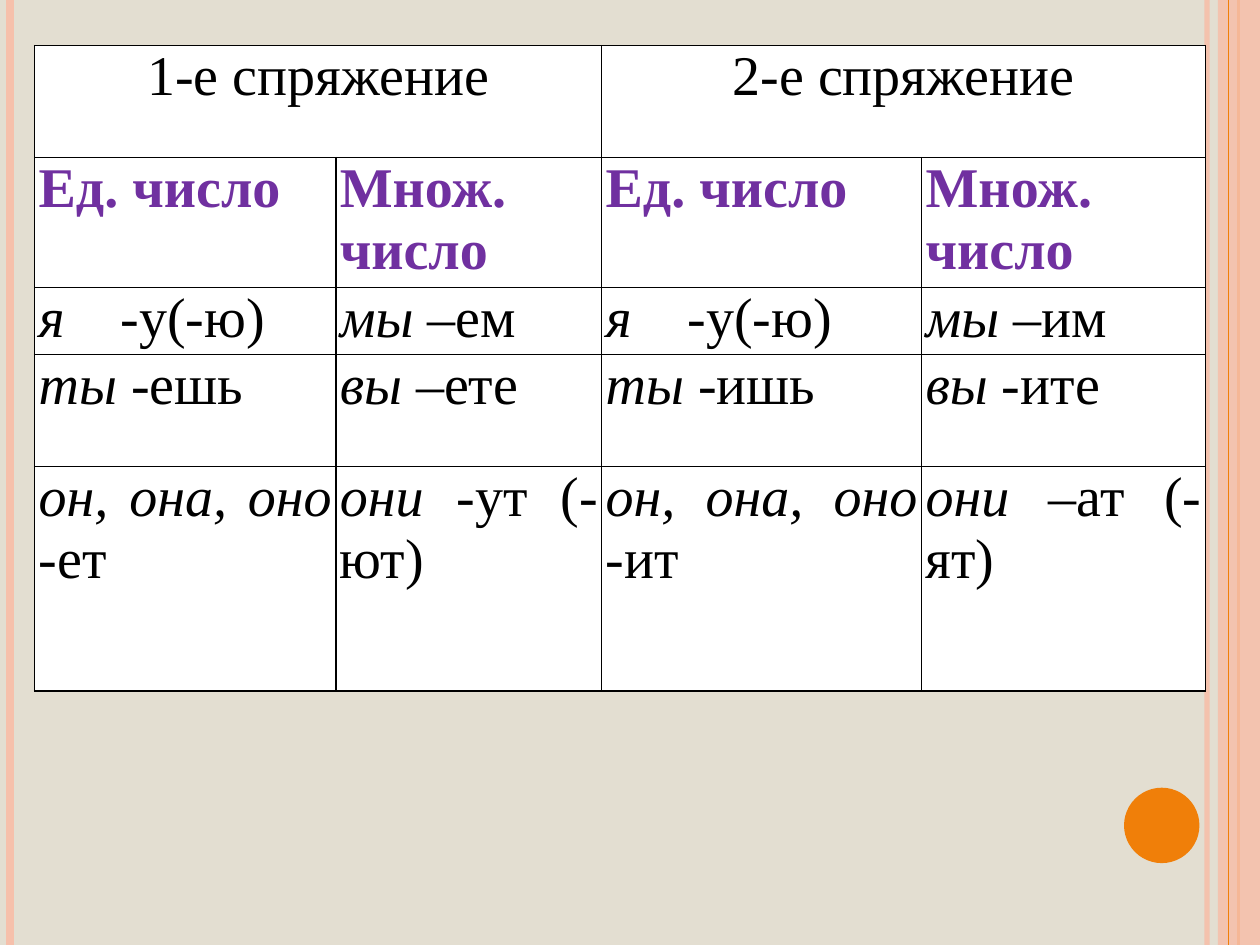
from dataclasses import dataclass

from lxml import etree
from pptx import Presentation
from pptx.dml.color import RGBColor
from pptx.enum.shapes import MSO_CONNECTOR, MSO_SHAPE
from pptx.enum.text import PP_ALIGN
from pptx.oxml.ns import qn
from pptx.util import Cm, Pt

LINE = MSO_CONNECTOR.STRAIGHT
RECT, OVAL = MSO_SHAPE.RECTANGLE, MSO_SHAPE.OVAL
CENTER, JUSTIFY = PP_ALIGN.CENTER, PP_ALIGN.JUSTIFY

WIDTH, HEIGHT = 25.4, 19.05
COLS = [6.07, 5.36, 6.45, 5.72]
ROWS = [2.26, 2.62, 1.35, 2.26, 4.52]
HEADS = ["1-е спряжение", "2-е спряжение"]
NUMBERS = ["Ед. число", "Множ. число"]
# Pronoun with its gap, then the ending for each conjugation
FORMS = [
    [("я\t", "-у(-ю)", "-у(-ю)"), ("мы ", "–ем", "–им")],
    [("ты ", "-ешь", "-ишь"), ("вы ", "–ете", "-ите")],
    [("он, она, оно ", "-ет", "-ит"), ("они ", "-ут (-ют)", "–ат (-ят)")],
]


@dataclass(frozen=True)
class Theme:
    back: str = "E3DED1"
    pink: str = "F6C0AB"
    orange: str = "F07F09"
    white: str = "FFFFFF"
    black: str = "000000"
    purple: str = "7030A0"
    font: str = "Times New Roman"
    size: int = 32
    border: int = 1
    inset: float = 0.08
    tab: float = 1.65


def paint(fill, color, alpha=100):
    """Fill with a solid colour; alpha is the opacity in percent."""
    fill.solid()
    fill.fore_color.rgb = RGBColor.from_string(color)
    if alpha < 100:
        node = fill.fore_color._xFill[0]
        etree.SubElement(node, qn("a:alpha"), val=str(alpha * 1000))


class Painter:
    def __init__(self, slide, theme):
        self.slide = slide
        self.theme = theme
        paint(slide.background.fill, theme.back)

    def stripe(self, x, color, width, alpha=100):
        """Draw a vertical line over the full height of the slide."""
        line = self.slide.shapes.add_connector(
            LINE, Cm(x), Cm(0), Cm(x), Cm(HEIGHT))
        line.line.width = Pt(width)
        paint(line.line.fill, color, alpha)
        etree.SubElement(line._element.spPr, qn("a:effectLst"))

    def shape(self, kind, x, y, width, height, color, alpha=100):
        shape = self.slide.shapes.add_shape(
            kind, Cm(x), Cm(y), Cm(width), Cm(height))
        shape.shadow.inherit = False
        shape.line.fill.background()
        paint(shape.fill, color, alpha)

    def table(self, x, y, cols, rows):
        frame = self.slide.shapes.add_table(
            len(rows), len(cols), Cm(x), Cm(y), Cm(sum(cols)), Cm(sum(rows)))
        table = frame.table
        table.first_row = table.horz_banding = False
        for col, width in zip(table.columns, cols):
            col.width = Cm(width)
        for row, height in zip(table.rows, rows):
            row.height = Cm(height)
        for cell in table.iter_cells():
            self.style(cell)
        return table

    def style(self, cell):
        """Set the borders, fill and margins of a cell."""
        props = cell._tc.get_or_add_tcPr()
        for side in ("lnL", "lnR", "lnT", "lnB"):
            edge = etree.SubElement(
                props, qn(f"a:{side}"), w=str(Pt(self.theme.border)))
            fill = etree.SubElement(edge, qn("a:solidFill"))
            etree.SubElement(fill, qn("a:srgbClr"), val=self.theme.black)
        paint(cell.fill, self.theme.white)
        cell.margin_left = cell.margin_right = Cm(self.theme.inset)
        cell.margin_top = cell.margin_bottom = 0

    def label(self, cell, parts, align=JUSTIFY, color=None, bold=False):
        """Add one run per part; all but the last are italic."""
        para = cell.text_frame.paragraphs[0]
        para.alignment = align
        for part in parts:
            run = para.add_run()
            run.text = part
            font = run.font
            font.name, font.size = self.theme.font, Pt(self.theme.size)
            font.bold, font.italic = bold, part is not parts[-1]
            font.color.rgb = RGBColor.from_string(color or self.theme.black)
        if "\t" in parts[0]:
            tabs = etree.SubElement(para._p.get_or_add_pPr(), qn("a:tabLst"))
            etree.SubElement(
                tabs, qn("a:tab"), pos=str(Cm(self.theme.tab)), algn="l")


def main():
    deck = Presentation()
    deck.slide_width, deck.slide_height = Cm(WIDTH), Cm(HEIGHT)
    theme = Theme()
    art = Painter(deck.slides.add_slide(deck.slide_layouts[6]), theme)

    art.stripe(24.33, theme.pink, 3, 93)
    art.stripe(0.2, theme.pink, 4.5)
    art.stripe(24.97, theme.orange, 1.5)
    art.shape(RECT, 24.55, 0, 0.85, HEIGHT, theme.pink, 87)
    art.stripe(24.77, theme.orange, 0.75)
    art.shape(OVAL, 22.66, 15.88, 1.52, 1.52, theme.orange)

    table = art.table(0.7, 0.92, COLS, ROWS)
    for group, head in enumerate(HEADS):
        left = 2 * group
        table.cell(0, left).merge(table.cell(0, left + 1))
        art.label(table.cell(0, left), [head], CENTER)
        for side, number in enumerate(NUMBERS):
            col = left + side
            art.label(table.cell(1, col), [number],
                      color=theme.purple, bold=True)
            for row, forms in enumerate(FORMS, start=2):
                pronoun, *ends = forms[side]
                art.label(table.cell(row, col), [pronoun, ends[group]])

    deck.save("out.pptx")


if __name__ == "__main__":
    main()
